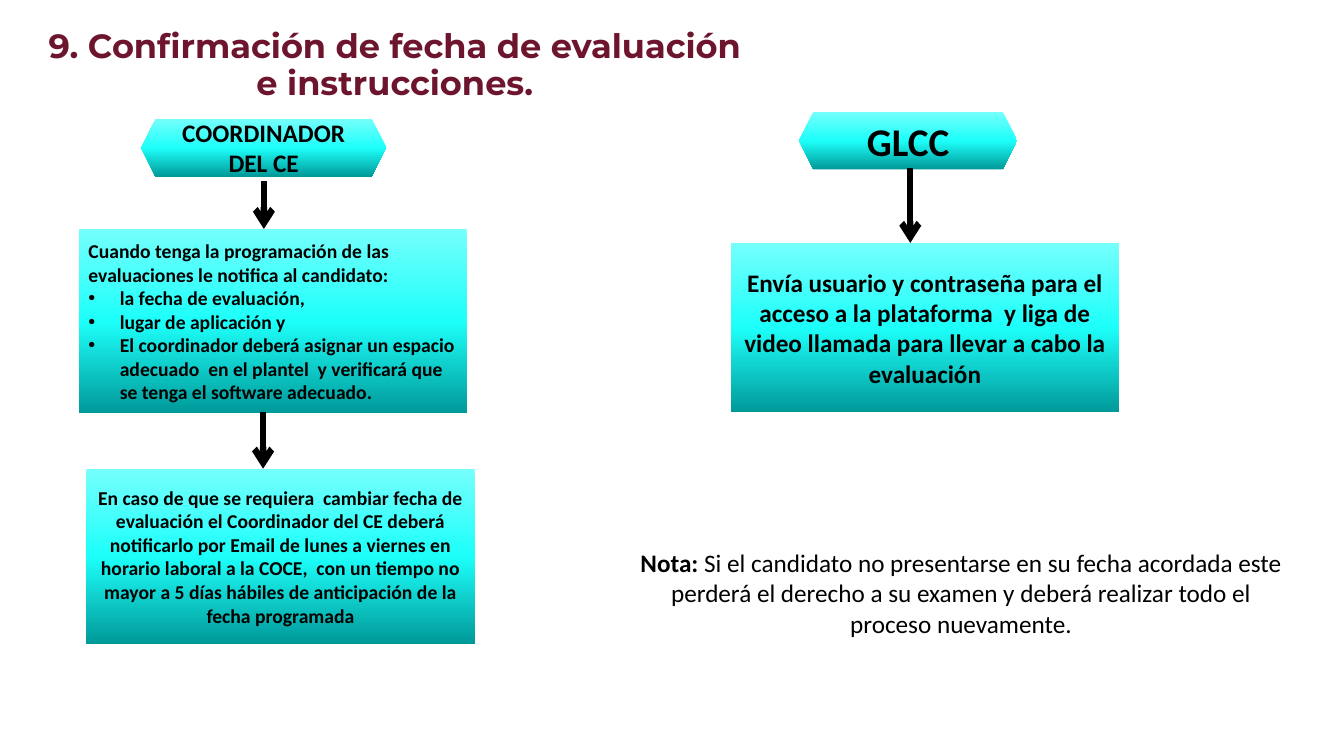
from lxml.etree import SubElement
from pptx import Presentation
from pptx.dml.color import RGBColor
from pptx.enum.shapes import MSO_CONNECTOR as Connector, MSO_SHAPE as Shape
from pptx.enum.text import MSO_ANCHOR as Anchor, MSO_AUTO_SIZE as AutoSize, PP_ALIGN as Align
from pptx.oxml.ns import qn
from pptx.util import Cm, Pt

BLACK = "000000"
GRADIENT = {0: "75FFFC", 50: "1DFFFA", 100: "009999"}
BOX_WIDTH = 9.78
HEXAGON_HEIGHT = 1.45


def color(value):
    """Turn a hex string into a colour."""
    return RGBColor.from_string(value)


def add_run(paragraph, text, size, bold=True, name="Calibri", hex_color=BLACK):
    """Append a formatted run to a paragraph."""
    run = paragraph.add_run()
    run.text = text
    for key, value in {"size": Pt(size), "bold": bold, "name": name}.items():
        setattr(run.font, key, value)
    run.font.color.rgb = color(hex_color)


def add_bullet(paragraph):
    """Give a paragraph a hanging round bullet."""
    properties = paragraph._p.get_or_add_pPr()
    properties.set("marL", str(Cm(0.79)))
    properties.set("indent", str(Cm(-0.79)))
    SubElement(properties, qn("a:buFont"), typeface="Arial")
    SubElement(properties, qn("a:buChar"), char="•")


def fill_gradient(shape):
    """Fill a shape with the vertical turquoise gradient."""
    shape.fill.gradient()
    shape.fill.gradient_angle = 270
    stops = shape._element.spPr.find(qn("a:gradFill")).find(qn("a:gsLst"))
    for stop in list(stops):
        stops.remove(stop)
    for percent, value in GRADIENT.items():
        stop = SubElement(stops, qn("a:gs"), pos=str(percent * 1000))
        SubElement(stop, qn("a:srgbClr"), val=value)


def add_box(slide, kind, position, text, size, bullets=(), align=Align.CENTER):
    """Add a gradient shape with a text and optional bullets."""
    shape = slide.shapes.add_shape(kind, *map(Cm, position))
    shape.shadow.inherit = False
    shape.line.fill.background()
    fill_gradient(shape)
    frame = shape.text_frame
    for key, value in {"word_wrap": True, "vertical_anchor": Anchor.MIDDLE}.items():
        setattr(frame, key, value)
    frame.paragraphs[0].alignment = align
    add_run(frame.paragraphs[0], text, size)
    for bullet in bullets:
        paragraph = frame.add_paragraph()
        paragraph.alignment = align
        add_bullet(paragraph)
        add_run(paragraph, bullet, size)


def add_arrow(slide, x, top, bottom):
    """Add a thick downward arrow."""
    arrow = slide.shapes.add_connector(Connector.STRAIGHT, Cm(x), Cm(top), Cm(x), Cm(bottom))
    arrow.line.width = Pt(4.5)
    arrow.line.color.rgb = color(BLACK)
    properties = arrow._element.spPr
    SubElement(properties.find(qn("a:ln")), qn("a:tailEnd"), type="arrow")
    SubElement(properties, qn("a:effectLst"))


def set_title(slide, text):
    """Place and format the slide title."""
    title = slide.shapes.title
    position = {"left": 0.74, "top": 0.53, "width": 18.42, "height": 2.18}
    for key, value in position.items():
        setattr(title, key, Cm(value))
    frame = title.text_frame
    frame_format = {"word_wrap": True, "auto_size": AutoSize.NONE, "vertical_anchor": Anchor.BOTTOM}
    for key, value in frame_format.items():
        setattr(frame, key, value)
    paragraph = frame.paragraphs[0]
    for key, value in {"alignment": Align.CENTER, "line_spacing": 0.9}.items():
        setattr(paragraph, key, value)
    add_run(paragraph, text, 24, name="Montserrat", hex_color="6E152E")


def add_note(slide, label, text):
    """Add the centred note with its bold label."""
    frame = slide.shapes.add_textbox(Cm(15.75), Cm(13.67), Cm(16.94), Cm(2.57)).text_frame
    for key, value in {"word_wrap": True, "auto_size": AutoSize.SHAPE_TO_FIT_TEXT}.items():
        setattr(frame, key, value)
    paragraph = frame.paragraphs[0]
    paragraph.alignment = Align.CENTER
    add_run(paragraph, label, 18)
    add_run(paragraph, text, 18, bold=False)


def main():
    """Build the slide and save it."""
    presentation = Presentation()
    presentation.slide_width = Cm(33.87)
    presentation.slide_height = Cm(19.05)
    slide = presentation.slides.add_slide(presentation.slide_layouts[5])

    set_title(slide, "9. Confirmación de fecha de evaluación e instrucciones.")
    add_box(slide, Shape.RECTANGLE, (18.42, 6.12, BOX_WIDTH, 4.27),
            "Envía usuario y contraseña para el acceso a la plataforma  y liga de "
            "video llamada para llevar a cabo la evaluación", 18)
    add_box(slide, Shape.HEXAGON, (20.14, 2.82, 5.49, HEXAGON_HEIGHT), "GLCC", 28)
    add_box(slide, Shape.RECTANGLE, (2.18, 11.81, BOX_WIDTH, 4.42),
            "En caso de que se requiera  cambiar fecha de evaluación el Coordinador del CE "
            "deberá notificarlo por Email de lunes a viernes en horario laboral a la COCE,  "
            "con un tiempo no mayor a 5 días hábiles de anticipación de la fecha programada", 14)
    add_box(slide, Shape.HEXAGON, (3.56, 3, 6.17, HEXAGON_HEIGHT), "COORDINADOR DEL CE", 18)
    add_box(slide, Shape.RECTANGLE, (1.98, 5.77, BOX_WIDTH, 4.65),
            "Cuando tenga la programación de las evaluaciones le notifica al candidato:", 14,
            ("la fecha de evaluación,",
             "lugar de aplicación y",
             "El coordinador deberá asignar un espacio adecuado  en el plantel  y "
             "verificará que se tenga el software adecuado."), Align.LEFT)
    add_note(slide, "Nota:",
             " Si el candidato no presentarse en su fecha acordada este perderá el derecho "
             "a su examen y deberá realizar todo el proceso nuevamente.")
    for x, top, bottom in ((6.63, 10.39, 11.81), (6.65, 4.57, 5.77), (22.94, 4.24, 6.12)):
        add_arrow(slide, x, top, bottom)
    presentation.save("out.pptx")


if __name__ == "__main__":
    main()
